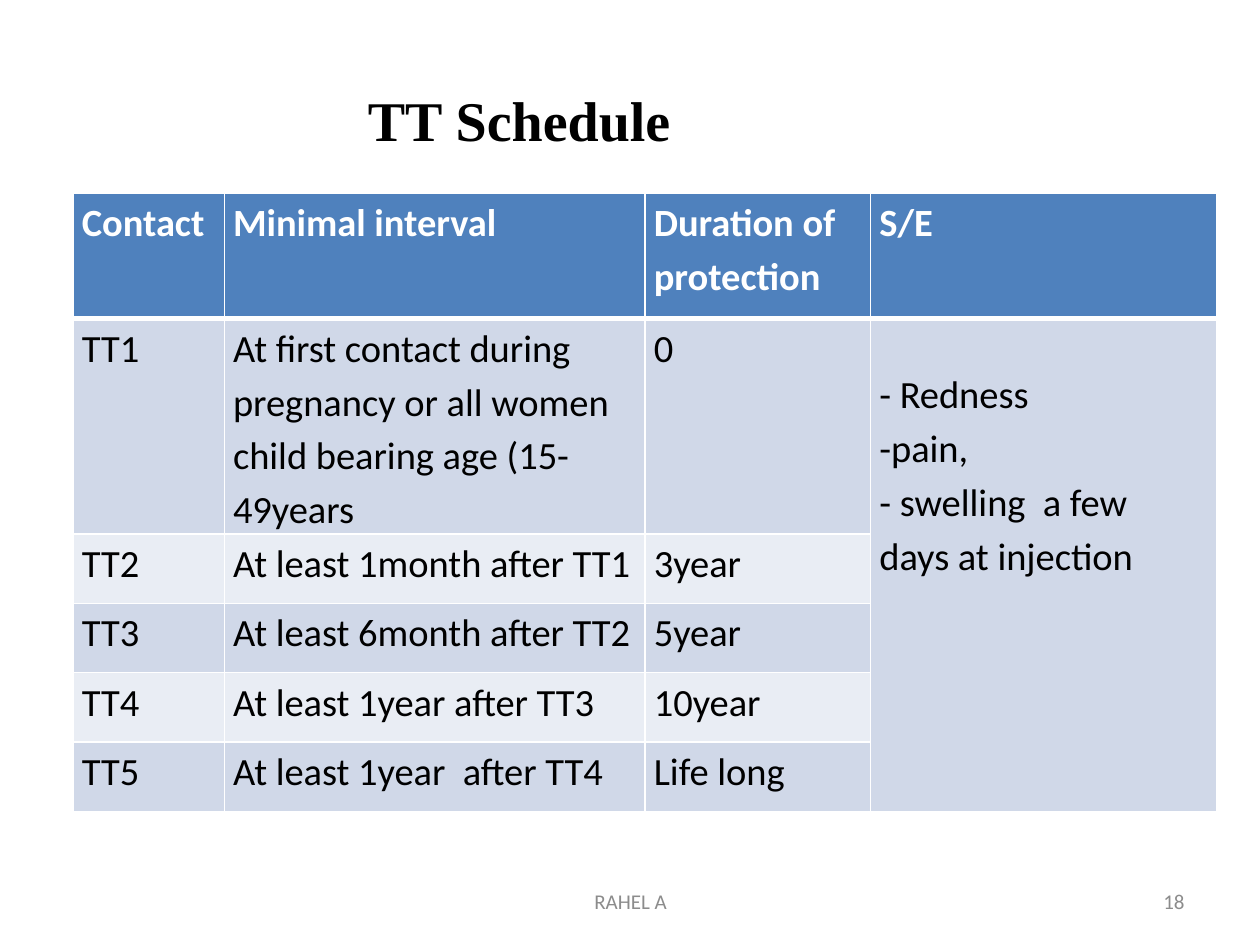
from dataclasses import dataclass

from lxml import etree
from pptx import Presentation, util as u
from pptx.dml.color import RGBColor
from pptx.enum import text
from pptx.oxml import ns


@dataclass(frozen=True)
class Theme:
    title_font: str = "Times New Roman"
    body_font: str = "Calibri"
    title_size: int = 32
    table_size: int = 22
    footer_size: int = 12
    black: str = "000000"
    white: str = "FFFFFF"
    gray: str = "8C8C8C"
    header: str = "4F81BD"
    bands: tuple = ("D0D8E8", "E9EDF4")


THEME = Theme()
WIDTH, HEIGHT = u.Inches(10), u.Inches(7.5)
COLUMNS = (1.2, 3.34, 1.79, 2.75)
ROWS = (1, 1.64) + (0.55,) * 4
HEADINGS = ("Contact", "Minimal interval", "Duration of protection", "S/E")
CONTACTS = (
    ("TT1", "At first contact during pregnancy or all women child bearing age (15-49years", "0"),
    ("TT2", "At least 1month after TT1", "3year"),
    ("TT3", "At least 6month after TT2", "5year"),
    ("TT4", "At least 1year after TT3", "10year"),
    ("TT5", "At least 1year  after TT4", "Life long"),
)
SIDE_EFFECTS = ("- Redness", "-pain,", "- swelling  a few  days at injection")


def write(frame, *lines, size, color=THEME.black, font=THEME.body_font, bold=False,
          align=text.PP_ALIGN.LEFT, spacing=1):
    for index, line in enumerate(lines):
        paragraph = frame.add_paragraph() if index else frame.paragraphs[0]
        paragraph.alignment = align
        paragraph.line_spacing = spacing
        run = paragraph.add_run()
        run.text = line
        run.font.name = font
        run.font.size = u.Pt(size)
        run.font.bold = bold
        run.font.color.rgb = RGBColor.from_string(color)


def add_title(slide, wording):
    title = slide.shapes.title
    title.left, title.top = u.Inches(0.5), u.Inches(0.63)
    title.width, title.height = u.Inches(9), u.Inches(0.8)
    frame = title.text_frame
    frame.margin_left = u.Inches(2.42)
    frame.vertical_anchor = text.MSO_ANCHOR.TOP
    write(frame, wording, size=THEME.title_size, font=THEME.title_font, bold=True)


def set_borders(cell, bottom):
    properties = cell._tc.get_or_add_tcPr()
    for side, width in (("L", 1), ("R", 1), ("T", 1), ("B", bottom)):
        line = etree.SubElement(properties, ns.qn(f"a:ln{side}"), w=str(u.Pt(width)))
        fill = etree.SubElement(line, ns.qn("a:solidFill"))
        etree.SubElement(fill, ns.qn("a:srgbClr"), val=THEME.white)


def format_cell(cell, row):
    cell.margin_left = cell.margin_right = u.Inches(0.07)
    cell.margin_top = cell.margin_bottom = 0
    set_borders(cell, 1 if row else 3)
    cell.fill.solid()
    color = THEME.bands[(row - 1) % 2] if row else THEME.header
    cell.fill.fore_color.rgb = RGBColor.from_string(color)


def add_schedule(slide):
    table = slide.shapes.add_table(
        len(ROWS), len(COLUMNS), u.Inches(0.58), u.Inches(1.53),
        u.Inches(sum(COLUMNS)), u.Inches(sum(ROWS))).table
    for column, width in zip(table.columns, COLUMNS):
        column.width = u.Inches(width)
    for row, height in zip(table.rows, ROWS):
        row.height = u.Inches(height)
    for row, values in enumerate((HEADINGS, *CONTACTS)):
        for column in range(len(COLUMNS)):
            format_cell(table.cell(row, column), row)
        for column, value in enumerate(values):
            write(table.cell(row, column).text_frame, value, size=THEME.table_size,
                  color=THEME.black if row else THEME.white, bold=row == 0, spacing=1.15)
    effects = table.cell(1, 3)
    effects.merge(table.cell(len(ROWS) - 1, 3))
    effects.margin_top = u.Inches(0.37)
    write(effects.text_frame, *SIDE_EFFECTS, size=THEME.table_size, spacing=1.15)


def add_footer(slide, wording, left, width, align):
    box = slide.shapes.add_textbox(u.Inches(left), u.Inches(6.95), u.Inches(width), u.Inches(0.4))
    frame = box.text_frame
    frame.word_wrap = True
    frame.vertical_anchor = text.MSO_ANCHOR.MIDDLE
    write(frame, wording, size=THEME.footer_size, color=THEME.gray, align=align)


def main():
    presentation = Presentation()
    presentation.slide_width, presentation.slide_height = WIDTH, HEIGHT
    slide = presentation.slides.add_slide(presentation.slide_layouts.get_by_name("Title Only"))
    add_title(slide, "TT Schedule")
    add_schedule(slide)
    add_footer(slide, "18", 7.17, 2.33, text.PP_ALIGN.RIGHT)
    add_footer(slide, "RAHEL A", 3.42, 3.17, text.PP_ALIGN.CENTER)
    presentation.save("out.pptx")


if __name__ == "__main__":
    main()
